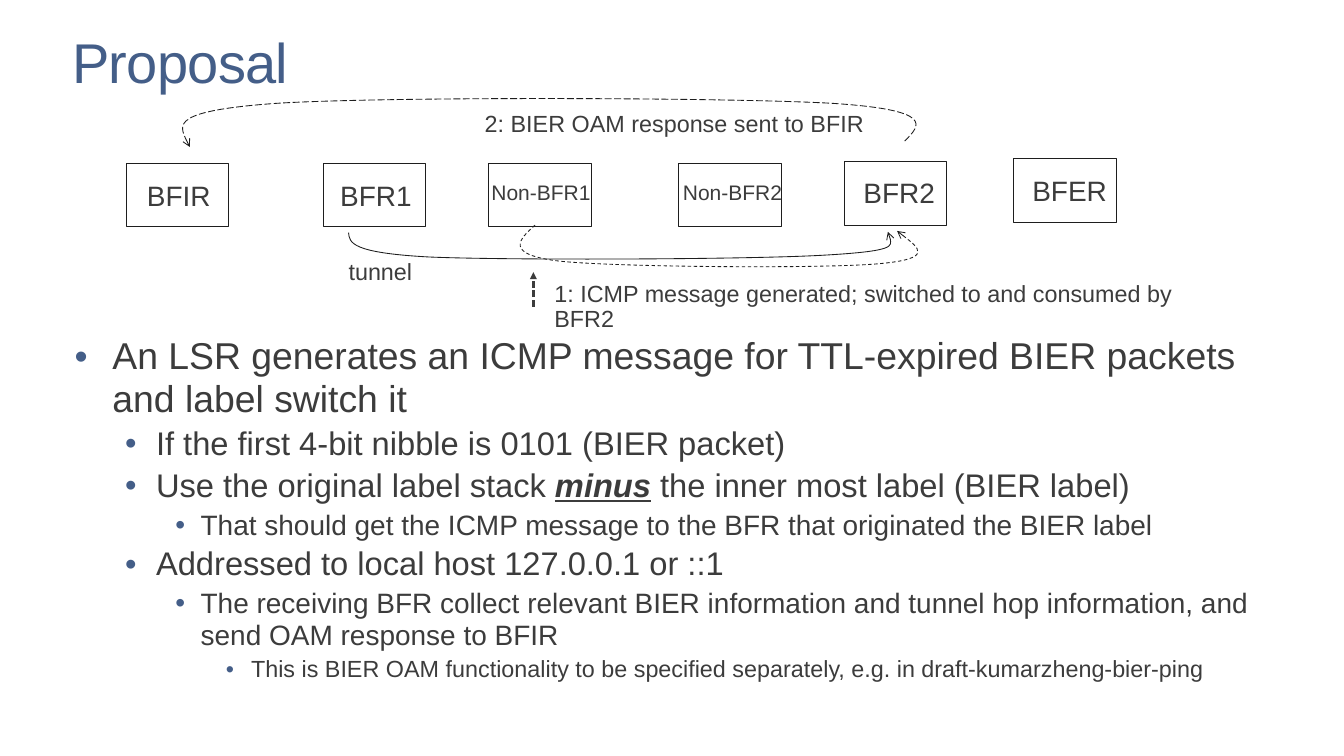
import pptx
import pptx.util
import pptx.dml.color
import pptx.enum.dml
import pptx.enum.shapes
import pptx.enum.text
import pptx.oxml
import pptx.oxml.ns

Inches, Pt = pptx.util.Inches, pptx.util.Pt
RGBColor = pptx.dml.color.RGBColor
DASH = pptx.enum.dml.MSO_LINE
AUTO = pptx.enum.text.MSO_AUTO_SIZE
ANCHOR = pptx.enum.text.MSO_ANCHOR
qn = pptx.oxml.ns.qn

BLUE = RGBColor(0x44, 0x5E, 0x88)
GREY = RGBColor(0x3C, 0x3C, 0x3C)
INK = RGBColor(0x1E, 0x1E, 0x1E)
FONT = "Arial"

TITLE = "Proposal"
# level, runs; every second run is stressed
POINTS = [
    (0, ["An LSR generates an ICMP message for TTL-expired BIER packets and label switch it"]),
    (1, ["If the first 4-bit nibble is 0101 (BIER packet)"]),
    (1, ["Use the original label stack ", "minus", " the inner most label (BIER label)"]),
    (2, ["That should get the ICMP message to the BFR that originated the BIER label"]),
    (1, ["Addressed to local host 127.0.0.1 or ::1"]),
    (2, ["The receiving BFR collect relevant BIER information and tunnel hop information, "
         "and send OAM response to BFIR"]),
    (3, ["This is BIER OAM functionality to be specified separately, "
         "e.g. in draft-kumarzheng-bier-ping"]),
]
# size, left margin, hanging indent
LEVELS = [(32, 0.45, 0.45), (28, 0.97, 0.37), (24, 1.5, 0.3), (20, 2.1, 0.3)]

BOX_W, BOX_H = 1.22, 0.76
# box left and top; label, left, top, width, height, size
NODES = [
    (1.5, 1.94, ("BFIR", 1.7, 2.15, 0.87, 0.41, 24)),
    (3.85, 1.94, ("BFR1", 4, 2.15, 0.96, 0.41, 24)),
    (5.82, 1.94, ("Non-BFR1", 5.8, 2.15, 1.29, 0.32, 18)),
    (8.08, 1.94, ("Non-BFR2", 8.08, 2.15, 1.29, 0.32, 18)),
    (10.05, 1.92, ("BFR2", 10.23, 2.11, 0.96, 0.41, 24)),
    (12.07, 1.89, ("BFER", 12.24, 2.09, 1, 0.41, 24)),
]
NOTES = [
    ("tunnel", 4.1, 3.08, 0.87, 0.35, 20),
    ("2: BIER OAM response sent to BFIR", 5.72, 1.32, 4.65, 0.35, 20),
]
STEP = ("1: ICMP message generated; switched to and consumed by BFR2", 6.55, 3.34, 8.1, 0.35, 20)
# dash, then a start point and three points for each curve
CURVES = [
    (None, [(4.15, 2.77), (4.16, 2.89), (4.18, 3.01), (5.11, 3.06),
            (6.05, 3.1), (8.87, 3.09), (9.78, 3.04),
            (10.69, 2.99), (10.63, 2.88), (10.57, 2.76)]),
    (DASH.LONG_DASH, [(10.77, 1.68), (10.96, 1.49), (11.14, 1.31), (9.9, 1.23),
                      (8.65, 1.16), (4.57, 1.15), (3.3, 1.23),
                      (2.03, 1.32), (2.14, 1.53), (2.26, 1.75)]),
    (DASH.DASH, [(6.37, 2.68), (6.18, 2.85), (5.99, 3.03), (6.67, 3.11),
                 (7.35, 3.18), (9.79, 3.2), (10.46, 3.14),
                 (11.13, 3.08), (10.9, 2.92), (10.68, 2.75)]),
]
POINTER = (6.35, 3.65, 6.35, 3.24)

deck = pptx.Presentation()
deck.slide_width, deck.slide_height = Inches(16), Inches(9)
slide = deck.slides.add_slide(deck.slide_layouts[6])
shapes = slide.shapes


def style(item, **values):
    for name, value in values.items():
        setattr(item, name, value)


def add(parent, tag, **values):
    node = parent.makeelement(qn(tag), values)
    parent.append(node)
    return node


def frame(x, y, w, h, pad_x, pad_y, **values):
    text = shapes.add_textbox(*map(Inches, (x, y, w, h))).text_frame
    style(text, margin_left=Inches(pad_x), margin_right=Inches(pad_x),
          margin_top=Inches(pad_y), margin_bottom=Inches(pad_y), **values)
    return text


def write(para, words, size, color=GREY, **values):
    run = para.add_run()
    run.text = words
    style(run.font, name=FONT, size=Pt(size), **values)
    run.font.color.rgb = color
    return run


def label(words, x, y, w, h, size, wrap=False):
    text = frame(x, y, w, h, 0.05, 0.02, word_wrap=wrap, auto_size=AUTO.SHAPE_TO_FIT_TEXT)
    para = text.paragraphs[0]
    para.line_spacing = 0.9
    write(para, words, size)


def stroke(line, color, width, dash=None, tip=None):
    line.color.rgb = color
    line.width = Pt(width)
    if dash is not None:
        line.dash_style = dash
    if tip:
        add(line._get_or_add_ln(), "a:tailEnd", type=tip)


def curve(dash, points):
    """Draw a chain of cubic curves with an arrowhead at its end."""
    start, *rest = [(Inches(x), Inches(y)) for x, y in points]
    maker = shapes.build_freeform(*start, scale=1.0)
    maker.add_line_segments(rest, close=False)
    shape = maker.convert_to_shape()
    trail = next(shape._element.iter(qn("a:path")))
    steps = trail.findall(qn("a:lnTo"))
    for i in range(0, len(steps), 3):
        bend = add(trail, "a:cubicBezTo")
        for step in steps[i:i + 3]:
            bend.append(step[0])
            trail.remove(step)
    shape.shadow.inherit = False
    shape.fill.background()
    stroke(shape.line, INK, 0.75, dash, "arrow")


def bullet(para, level):
    size, left, hang = LEVELS[level]
    props = para._p.get_or_add_pPr()
    props.set("marL", str(Inches(left)))
    props.set("indent", str(-Inches(hang)))
    add(add(props, "a:buClr"), "a:srgbClr", val=str(BLUE))
    add(props, "a:buFont", typeface=FONT)
    add(props, "a:buChar", char="•")
    style(para, level=level, line_spacing=0.95)
    return size


head = frame(0.86, 0.41, 14.4, 0.73, 0, 0, word_wrap=True, vertical_anchor=ANCHOR.BOTTOM)
head.paragraphs[0].line_spacing = 0.9
title = write(head.paragraphs[0], TITLE, 48, BLUE)
title.font._element.set("spc", "-60")

body = frame(0.79, 3.95, 14.47, 4.76, 0.1, 0.05, word_wrap=True)
for i, (level, runs) in enumerate(POINTS):
    para = body.add_paragraph() if i else body.paragraphs[0]
    size = bullet(para, level)
    if i:
        para.space_before = Pt(4)
    for j, words in enumerate(runs):
        stress = j % 2 == 1
        write(para, words, size, bold=stress, italic=stress, underline=stress)

for x, y, name in NODES:
    box = shapes.add_shape(pptx.enum.shapes.MSO_SHAPE.RECTANGLE,
                           *map(Inches, (x, y, BOX_W, BOX_H)))
    box.shadow.inherit = False
    box.fill.background()
    stroke(box.line, INK, 0.75)
    label(*name)

for note in NOTES:
    label(*note)
label(*STEP, wrap=True)

for dash, points in CURVES:
    curve(dash, points)

arrow = shapes.add_connector(pptx.enum.shapes.MSO_CONNECTOR.STRAIGHT, *map(Inches, POINTER))
stroke(arrow.line, GREY, 2, DASH.SQUARE_DOT, "triangle")
add(arrow._element.spPr, "a:effectLst")

deck.save("out.pptx")
